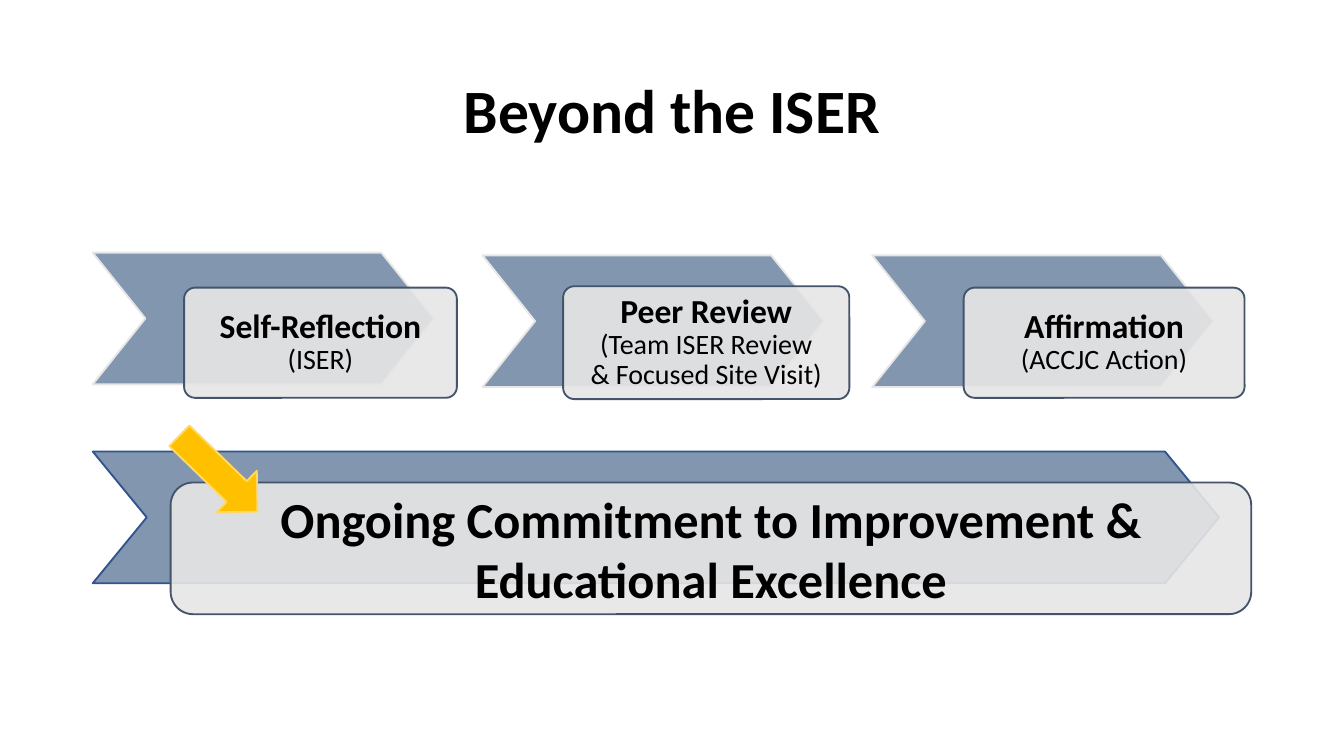
"""Build the slide on the steps that go beyond the ISER."""
from lxml import etree
from pptx import Presentation
from pptx.dml.color import RGBColor
from pptx.enum import shapes, text
from pptx.oxml.ns import qn
from pptx.util import Inches, Pt

TITLE = "Beyond the ISER"
GOAL = "Ongoing Commitment to Improvement & Educational Excellence"
STEPS = [
    dict(head="Self-Reflection", sub="(ISER)", top=1.88, card=(1.37, 2.14, 2.03, 0.82)),
    dict(head="Peer Review", sub="(Team ISER Review & Focused Site Visit)", top=1.9,
         card=(4.19, 2.13, 2.13, 0.84)),
    dict(head="Affirmation", sub="(ACCJC Action)", top=1.9, card=(7.17, 2.14, 2.09, 0.82)),
]
THEME = dict(font="Calibri", ink="000000", band="8296B0", card="E7E6E6", edge="44546A",
             rim="31538F", gold="FFC000", glow="FFD966", title=33, goal=27, head=18, sub=15)
WIDTH = 10
LEFT, PITCH, WIDE, HIGH = 0.69, 2.9, 2.54, 0.98
KIND = shapes.MSO_SHAPE


def color(name):
    return RGBColor.from_string(THEME[name])


def draw(slide, kind, box, fill, line, adj, alpha=None, turn=0):
    shape = slide.shapes.add_shape(kind, *map(Inches, box))
    shape.shadow.inherit = False
    for spot, size in enumerate(adj):
        shape.adjustments[spot] = size
    shape.fill.solid()
    shape.fill.fore_color.rgb = color(fill)
    shape.line.color.rgb = color(line)
    shape.line.width = Pt(1)
    shape.rotation = turn
    if alpha:
        tint = shape.element.spPr.find(qn("a:solidFill"))[0]
        etree.SubElement(tint, qn("a:alpha")).set("val", str(alpha * 1000))
    return shape


def write(shape, runs, pad=(0.07, 0.04), space=None):
    frame = shape.text_frame
    frame.word_wrap = True
    frame.vertical_anchor = text.MSO_ANCHOR.MIDDLE
    frame.margin_left = frame.margin_right = Inches(pad[0])
    frame.margin_top = frame.margin_bottom = Inches(pad[1])
    para = frame.paragraphs[0]
    para.alignment = text.PP_ALIGN.CENTER
    para.line_spacing = space
    for spot, (words, size, bold) in enumerate(runs):
        if spot:
            para.add_line_break()
        run = para.add_run()
        run.text = words
        font = run.font
        font.name, font.size, font.bold = THEME["font"], Pt(THEME[size]), bold
        font.color.rgb = color("ink")


def main():
    deck = Presentation()
    deck.slide_width, deck.slide_height = Inches(WIDTH), Inches(WIDTH * 9 / 16)
    slide = deck.slides.add_slide(deck.slide_layouts[6])
    title = slide.shapes.add_textbox(*map(Inches, (LEFT, 0.3, 8.62, 1.09)))
    write(title, [(TITLE, "title", True)], space=0.9)

    for spot, step in enumerate(STEPS):
        box = (LEFT + spot * PITCH, step["top"], WIDE, HIGH)
        draw(slide, KIND.CHEVRON, box, "band", "card", [0.4])
        card = draw(slide, KIND.ROUNDED_RECTANGLE, step["card"], "card", "edge", [0.1], alpha=90)
        write(card, [(step["head"], "head", True), (step["sub"], "sub", False)],
              pad=(0.16, 0.16), space=0.9)

    draw(slide, KIND.CHEVRON, (LEFT, 3.36, 8.38, HIGH), "band", "rim", [0.41])
    goal = draw(slide, KIND.ROUNDED_RECTANGLE, (1.27, 3.59, 8.04, HIGH), "card", "edge",
                [0.17], alpha=90)
    write(goal, [(GOAL, "goal", True)])
    draw(slide, KIND.DOWN_ARROW, (1.41, 3.12, 0.43, 0.81), "gold", "glow", [0.5, 0.5], turn=314.2)
    deck.save("out.pptx")


if __name__ == "__main__":
    main()
